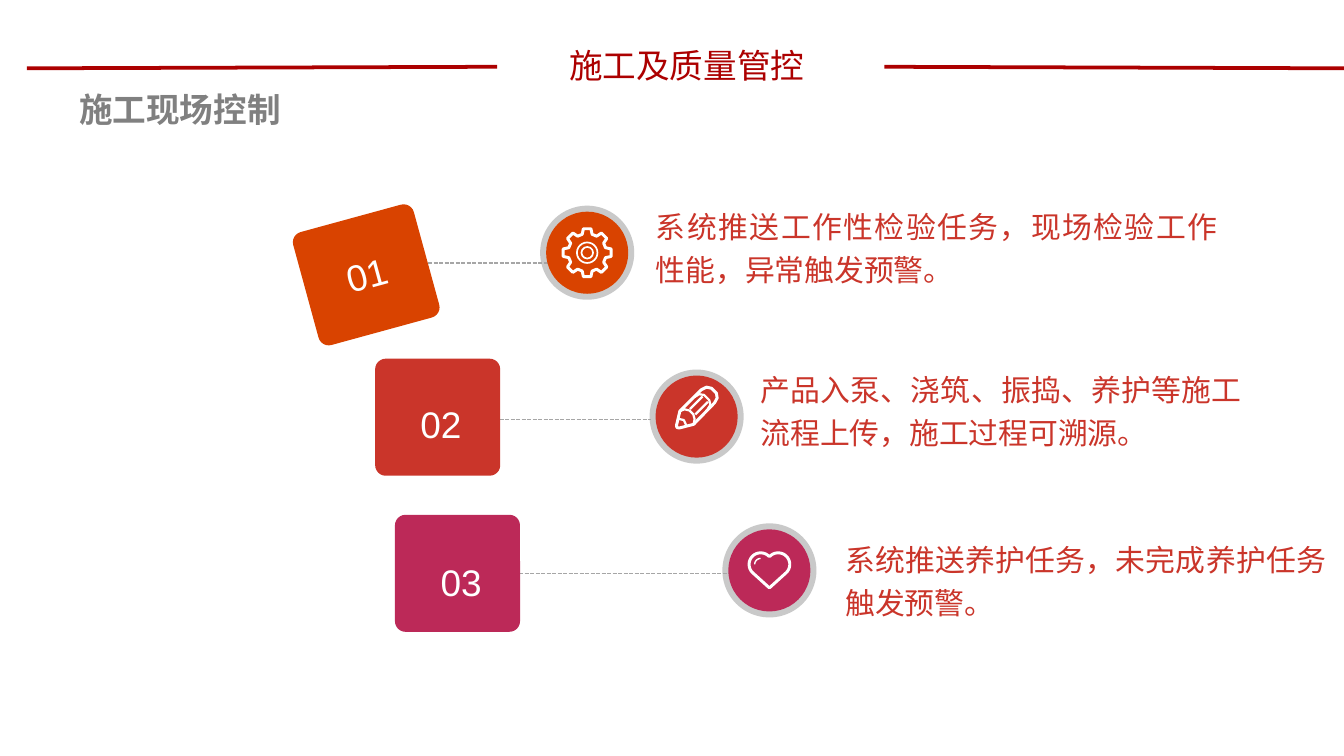
from dataclasses import dataclass
from math import cos, radians, sin

from lxml import etree
from pptx import Presentation
from pptx.dml.color import RGBColor
from pptx.enum import dml, shapes, text
from pptx.oxml import ns
from pptx.util import Pt


@dataclass(frozen=True)
class Theme:
    crimson: str = "AC0000"
    orange: str = "D94300"
    red: str = "CA352A"
    berry: str = "BC2958"
    gray: str = "A6A6A6"
    heading: str = "808080"
    white: str = "FFFFFF"
    latin: str = "Arial"
    cjk: str = "Noto Sans CJK SC"
    title_size: float = 18
    number_size: float = 19.8
    body_size: float = 16


theme = Theme()
prs = Presentation()
prs.slide_width, prs.slide_height = Pt(720), Pt(405)
slide = prs.slides.add_slide(prs.slide_layouts[5])
canvas = slide.shapes


def write(holder, box, words, font, size, color, align, inset=None, spacing=1.0):
    holder.left, holder.top, holder.width, holder.height = map(Pt, box)
    frame = holder.text_frame
    frame.word_wrap = True
    frame.auto_size = text.MSO_AUTO_SIZE.NONE
    frame.vertical_anchor = text.MSO_ANCHOR.TOP
    if inset is not None:
        frame.margin_left = frame.margin_right = Pt(inset)
        frame.margin_top = frame.margin_bottom = Pt(inset)
    frame.text = words
    paragraph = frame.paragraphs[0]
    paragraph.alignment = align
    paragraph.line_spacing = spacing
    paragraph.font.name = font
    paragraph.font.size = Pt(size)
    paragraph.font.color.rgb = RGBColor.from_string(color)
    return paragraph


def paint(shape, fill=None, line=None, width=1.4):
    if shape.shape_type == shapes.MSO_SHAPE_TYPE.LINE:
        etree.SubElement(shape._element.spPr, ns.qn("a:effectLst"))
    else:
        shape.shadow.inherit = False
        if fill:
            shape.fill.solid()
            shape.fill.fore_color.rgb = RGBColor.from_string(fill)
        else:
            shape.fill.background()
    if line:
        shape.line.color.rgb = RGBColor.from_string(line)
        shape.line.width = Pt(width)
    else:
        shape.line.fill.background()
    return shape


write(canvas.title, (275, 20.2, 185.8, 28.8), "施工及质量管控",
      theme.cjk, theme.title_size, theme.crimson, text.PP_ALIGN.CENTER)
section = write(canvas.add_textbox(0, 0, 0, 0), (14.4, 43.9, 347, 28.8), "施工现场控制",
                theme.cjk, theme.title_size, theme.heading, text.PP_ALIGN.LEFT)
section.font.bold = True
section._p.get_or_add_pPr().set("indent", str(Pt(20.9)))

for start, end in [((14.4, 36.6), (266.4, 35.8)), ((473.8, 35.8), (720, 36.6))]:
    rule = canvas.add_connector(shapes.MSO_CONNECTOR.STRAIGHT, *map(Pt, start + end))
    paint(rule, line=theme.crimson, width=2)

steps = [
    ("01", theme.orange, (162.7, 115.9), (174.2, 126.7), 344.7, (314.6, 135.4),
     (211.7, 312.5, 141), (351.4, 108, 301),
     "系统推送工作性检验任务，现场检验工作性能，异常触发预警。"),
    ("02", theme.red, (201, 192.2), (214.6, 206.6), 0, (373.2, 223.2),
     (247, 348.5, 224.8), (407.5, 195.1, 257.8),
     "产品入泵、浇筑、振捣、养护等施工流程上传，施工过程可溯源。"),
    ("03", theme.berry, (211.6, 275.8), (225.4, 291.6), 0, (412.2, 305.6),
     (269.3, 390.2, 307.2), (452.9, 286.6, 257.8),
     "系统推送养护任务，未完成养护任务触发预警。"),
]
for number, color, tile_at, number_at, angle, center, dash, caption_at, caption in steps:
    x1, x2, y = map(Pt, dash)
    link = canvas.add_connector(shapes.MSO_CONNECTOR.STRAIGHT, x1, y, x2, y)
    paint(link, line=theme.gray, width=0.75)
    link.line.dash_style = dml.MSO_LINE.SQUARE_DOT

    tile = canvas.add_shape(shapes.MSO_SHAPE.ROUNDED_RECTANGLE,
                            *map(Pt, (*tile_at, 67, 62.7)))
    tile.adjustments[0] = 0.09
    tile.rotation = angle
    paint(tile, color)
    label = canvas.add_textbox(0, 0, 0, 0)
    label.rotation = angle
    write(label, (*number_at, 43.2, 36), number, theme.latin, theme.number_size,
          theme.white, text.PP_ALIGN.CENTER, spacing=1.2)

    cx, cy = center
    for diameter, fill in [(50.4, theme.gray), (44, color)]:
        disc = canvas.add_shape(shapes.MSO_SHAPE.OVAL, Pt(cx - diameter / 2),
                                Pt(cy - diameter / 2), Pt(diameter), Pt(diameter))
        paint(disc, fill)
        if fill == theme.gray:
            tint = disc._element.spPr.find(".//" + ns.qn("a:srgbClr"))
            etree.SubElement(tint, ns.qn("a:alpha")).set("val", "60000")

    left, top, width = caption_at
    write(canvas.add_textbox(0, 0, 0, 0), (left, top, width, 46.8), caption, theme.latin,
          theme.body_size, theme.red, text.PP_ALIGN.JUSTIFY, inset=0, spacing=1.2)

gear_center, pencil_center, heart_center = [step[5] for step in steps]
gear = [(r * cos(radians(tooth + a)), r * sin(radians(tooth + a)))
        for tooth in range(0, 360, 45)
        for a, r in [(-15, 10.2), (-9, 13), (9, 13), (15, 10.2)]]
left_lobe = [(-4.7 + 6.2 * cos(radians(a)), -3.2 + 6.2 * sin(radians(a)))
             for a in range(135, 316, 10)]
heart = left_lobe + [(-x, y) for x, y in reversed(left_lobe)] + [(0, 9.4)]
gloss = [(-4.7 + 3.2 * cos(radians(a)), -3.2 + 3.2 * sin(radians(a)))
         for a in range(180, 271, 10)]
pencil = [(-10.8, 4.7), (-9, -2.9), (2.5, -14.4), (5.3, -15.8), (8, -15.2), (10.6, -12.6),
          (11, -10), (9.6, -7.4), (-1.6, 4.1), (-9.4, 6.1), (-10.6, 5.8)]
collar = [(-9, -2.9), (-6.5, -3.9), (-3.8, -3.2), (-1.8, -1.2), (-1.1, 1.4), (-1.6, 4.1)]
band = [(-1, -10.5), (1.4, -12), (4, -11.6), (6.8, -8.8), (7.4, -6.3), (6, -4)]
upper_edge = [(-3.6, -4), (3.2, -10.8)]
lower_edge = [(-0.7, -1.1), (6.1, -7.9)]
nib = [(-9.7, 1.2), (-6.8, 1.9), (-5.4, 5)]

strokes = [(gear_center, gear, True, 1.6), (heart_center, heart, True, 1.6),
           (heart_center, gloss, False, 0.75), (pencil_center, pencil, True, 1.6)]
strokes += [(pencil_center, part, False, 1.2)
            for part in (collar, band, upper_edge, lower_edge, nib)]
for (cx, cy), outline, closed, width in strokes:
    points = [(Pt(cx + x), Pt(cy + y)) for x, y in outline]
    builder = canvas.build_freeform(*points[0])
    builder.add_line_segments(points[1:], close=closed)
    paint(builder.convert_to_shape(), line=theme.white, width=width)

cx, cy = gear_center
for radius in (5.5, 3.1):
    ring = canvas.add_shape(shapes.MSO_SHAPE.OVAL, Pt(cx - radius), Pt(cy - radius),
                            Pt(2 * radius), Pt(2 * radius))
    paint(ring, line=theme.white, width=0.9)

prs.save("out.pptx")
